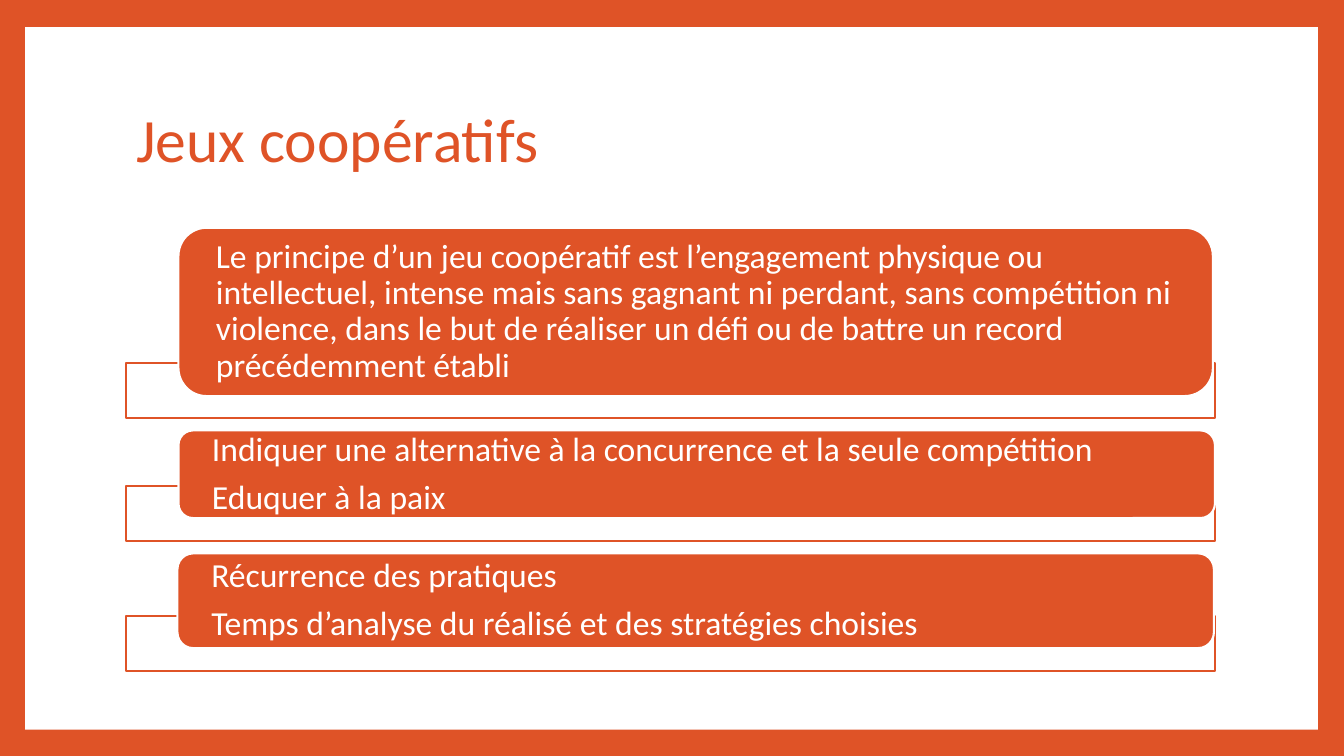
import pptx
import pptx.dml.color
import pptx.enum.shapes
import pptx.enum.text
import pptx.oxml.ns
import pptx.util
from lxml import etree

Inches = pptx.util.Inches
Pt = pptx.util.Pt
SHAPES = pptx.enum.shapes.MSO_SHAPE
ORANGE = pptx.dml.color.RGBColor(0xDF, 0x53, 0x27)
WHITE = pptx.dml.color.RGBColor(0xFF, 0xFF, 0xFF)
FONT = "Calibri"

TITLE = "Jeux coopératifs"
CARDS = [
    {"frame_top": 3.6, "box": (1.77, 2.26, 10.26, 1.67), "lines": [
        "Le principe d’un jeu coopératif est l’engagement physique ou "
        "intellectuel, intense mais sans gagnant ni perdant, sans compétition "
        "ni violence, dans le but de réaliser un défi ou de battre un record "
        "précédemment établi"]},
    {"frame_top": 4.82, "box": (1.77, 4.27, 10.28, 0.87), "lines": [
        "Indiquer une alternative à la concurrence et la seule compétition",
        "Eduquer à la paix"]},
    {"frame_top": 6.11, "box": (1.76, 5.49, 10.28, 0.94), "lines": [
        "Récurrence des pratiques",
        "Temps d’analyse du réalisé et des stratégies choisies"]},
]
LEFT, WIDTH, FRAME_HEIGHT = 1.25, 10.8, 0.55
TEXT_INSET = 0.29


def add_box(slide, kind, box, fill, line=None):
    """Add a filled shape with an optional outline."""
    shape = slide.shapes.add_shape(kind, *map(Inches, box))
    shape.shadow.inherit = False
    shape.fill.solid()
    shape.fill.fore_color.rgb = fill
    if line is None:
        shape.line.fill.background()
    else:
        shape.line.color.rgb = line
        shape.line.width = Pt(1.5)
    return shape


def set_opacity(shape, percent):
    """Make the solid fill of a shape partly transparent."""
    color = shape.element.spPr.find(
        pptx.oxml.ns.qn("a:solidFill") + "/" + pptx.oxml.ns.qn("a:srgbClr"))
    alpha = etree.SubElement(color, pptx.oxml.ns.qn("a:alpha"))
    alpha.set("val", str(percent * 1000))


def write_lines(shape, lines, size, color, space_after=0):
    """Write left-aligned, vertically centred paragraphs into a shape."""
    frame = shape.text_frame
    frame.text = "\n".join(lines)
    frame.word_wrap = True
    frame.auto_size = pptx.enum.text.MSO_AUTO_SIZE.NONE
    frame.vertical_anchor = pptx.enum.text.MSO_ANCHOR.MIDDLE
    for paragraph in frame.paragraphs:
        paragraph.alignment = pptx.enum.text.PP_ALIGN.LEFT
        paragraph.line_spacing = 0.9
        paragraph.space_before = Pt(0)
        paragraph.space_after = Pt(space_after)
        for run in paragraph.runs:
            run.font.name = FONT
            run.font.size = Pt(size)
            run.font.color.rgb = color


def add_card(slide, card):
    """Add an outlined frame with its rounded text box on top."""
    frame_box = (LEFT, card["frame_top"], WIDTH, FRAME_HEIGHT)
    frame = add_box(slide, SHAPES.RECTANGLE, frame_box, WHITE, ORANGE)
    set_opacity(frame, 90)
    label = add_box(slide, SHAPES.ROUNDED_RECTANGLE, card["box"], ORANGE, WHITE)
    write_lines(label, card["lines"], 24, WHITE, space_after=8.4)
    text_frame = label.text_frame
    text_frame.margin_left = text_frame.margin_right = Inches(TEXT_INSET)
    text_frame.margin_top = text_frame.margin_bottom = 0


def main():
    """Build the slide and save the presentation."""
    presentation = pptx.Presentation()
    presentation.slide_width = Inches(13.33)
    presentation.slide_height = Inches(7.5)
    slide = presentation.slides.add_slide(presentation.slide_layouts[5])
    slide.background.fill.solid()
    slide.background.fill.fore_color.rgb = ORANGE

    title = slide.shapes.title
    title.left, title.top = Inches(LEFT), Inches(0.67)
    title.width, title.height = Inches(WIDTH), Inches(1.48)
    write_lines(title, [TITLE], 44, ORANGE)

    panel = add_box(slide, SHAPES.RECTANGLE, (0.25, 0.27, 12.82, 6.97), WHITE)
    title.element.addprevious(panel.element)

    for card in CARDS:
        add_card(slide, card)
    presentation.save("out.pptx")


if __name__ == "__main__":
    main()
